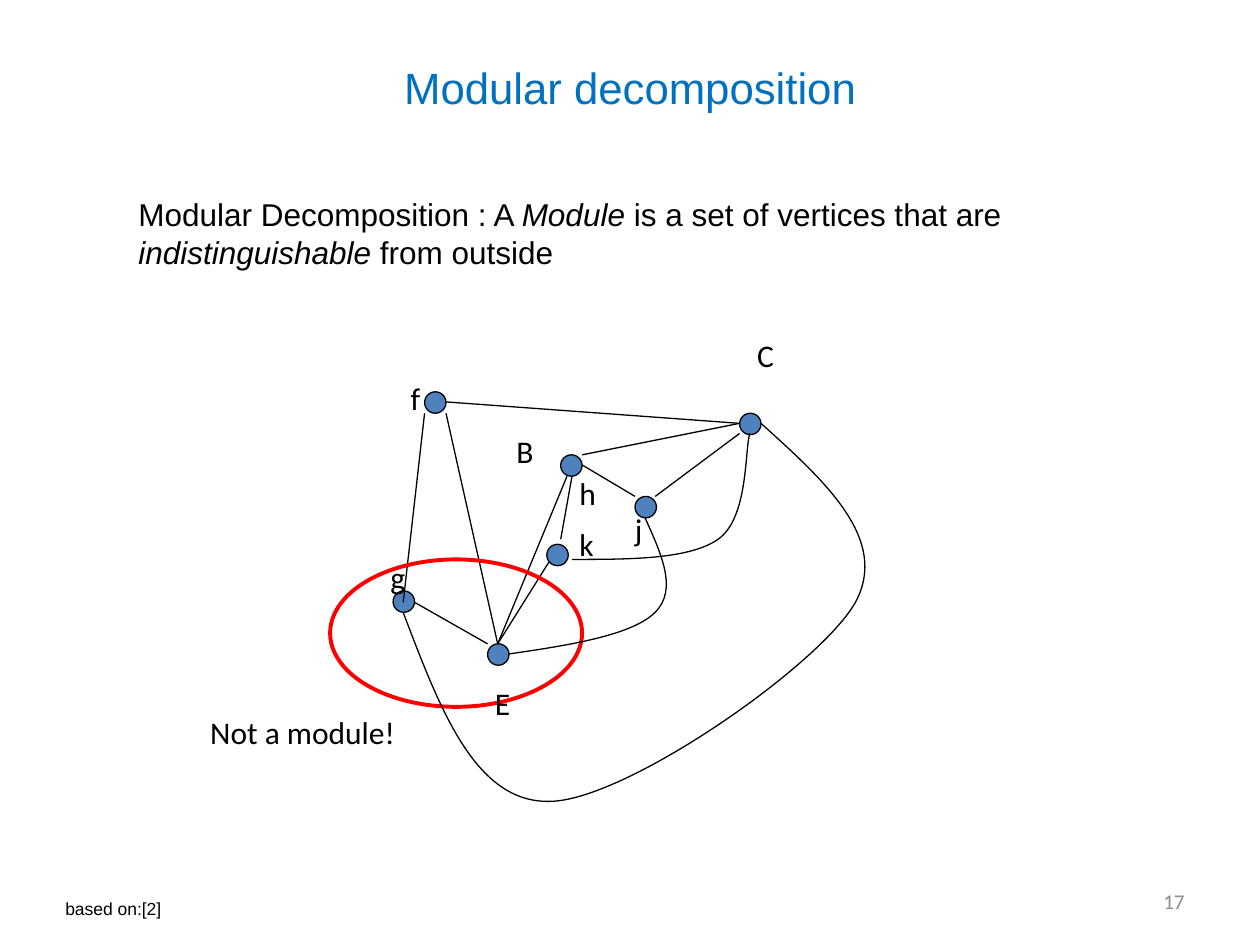
from lxml import etree
from pptx import Presentation
from pptx.dml.color import RGBColor
from pptx.enum.shapes import MSO_CONNECTOR, MSO_SHAPE
from pptx.enum.text import MSO_ANCHOR, PP_ALIGN
from pptx.oxml.ns import qn
from pptx.util import Inches, Pt

LINE, OVAL = MSO_CONNECTOR.STRAIGHT, MSO_SHAPE.OVAL
TOP, MIDDLE = MSO_ANCHOR.TOP, MSO_ANCHOR.MIDDLE
LEFT, CENTER, RIGHT = PP_ALIGN.LEFT, PP_ALIGN.CENTER, PP_ALIGN.RIGHT
BLACK, BLUE, RED = "000000", "4F81BD", "FF0000"
NODE, LABEL_H = 0.17, 0.4

# Content: (text, italic) runs of the definition
DEFINITION = [("Modular Decomposition : A ", False), ("Module", True),
              (" is a set of vertices that are ", False),
              ("indistinguishable", True), (" from outside", False)]

# Graph: left and top of each vertex
NODES = {"E": (3.87, 5.11), "h": (4.45, 3.61), "g": (3.12, 4.69),
         "C": (5.87, 3.28), "j": (5.04, 3.94), "f": (3.37, 3.11)}
NODE_K = (4.34, 4.32)
EDGES = [
    ((4.45, 4.28), (4.54, 3.78)),  # k-h
    ((4.62, 3.69), (5.04, 3.94)),  # h-j
    ((5.2, 3.94), (5.87, 3.44)),   # j-C
    ((4.62, 3.61), (5.87, 3.36)),  # h-C
    ((4.37, 4.44), (3.95, 5.11)),  # k-E
    ((4.5, 3.78), (3.95, 5.11)),   # h-E
    ((3.29, 4.78), (3.87, 5.11)),  # g-E
    ((3.2, 4.78), (3.37, 3.28)),   # g-f
    ((3.95, 5.11), (3.54, 3.28)),  # E-f
    ((3.54, 3.19), (5.87, 3.36)),  # f-C
]
# Curved edges: start point, then two control points and an end per segment
CURVES = [
    [(4.54, 4.44), (5, 4.44), (5.47, 4.44), (5.7, 4.28),
     (5.94, 4.11), (5.91, 3.58), (5.95, 3.44)],              # k-C
    [(5.12, 4.11), (5.25, 4.4), (5.38, 4.68), (5.2, 4.86),
     (5.02, 5.04), (4.53, 5.12), (4.04, 5.19)],              # j-E
    [(6.04, 3.36), (6.55, 3.82), (7.06, 4.28), (6.79, 4.78),
     (6.51, 5.28), (4.97, 6.35), (4.37, 6.36),
     (3.77, 6.38), (3.49, 5.62), (3.2, 4.86)],               # C-g
]
# Labels: text, left, top, width
LABELS = [("Not a module!", 1.57, 5.61, 1.92), ("B", 4, 3.38, 0.75),
          ("C", 5.91, 2.62, 0.75), ("E", 3.83, 5.38, 0.75),
          ("f", 3.16, 2.96, 0.75), ("g", 3, 4.38, 0.75),
          ("h", 4.5, 3.71, 0.38), ("k", 4.5, 4.12, 0.75),
          ("j", 4.94, 4, 0.22)]

prs = Presentation()
prs.slide_width, prs.slide_height = Inches(10), Inches(7.5)
s = prs.slides.add_slide(prs.slide_layouts[6])


def rgb(color):
    return RGBColor.from_string(color)


def outline(sp, color=BLACK, width=0.75):
    sp.line.color.rgb = rgb(color)
    sp.line.width = Pt(width)


def add_text(runs, x, y, w, h, size, font, color=BLACK, align=LEFT, anchor=TOP):
    tf = s.shapes.add_textbox(*map(Inches, (x, y, w, h))).text_frame
    tf.word_wrap = True
    tf.vertical_anchor = anchor
    p = tf.paragraphs[0]
    p.alignment = align
    for text, italic in runs:
        r = p.add_run()
        r.text = text
        r.font.name, r.font.size, r.font.italic = font, Pt(size), italic
        r.font.color.rgb = rgb(color)


def add_oval(x, y, w, h, fill=None, color=BLACK, width=0.75):
    sp = s.shapes.add_shape(OVAL, *map(Inches, (x, y, w, h)))
    sp.shadow.inherit = False
    if fill:
        sp.fill.solid()
        sp.fill.fore_color.rgb = rgb(fill)
    else:
        sp.fill.background()
    outline(sp, color, width)


def add_edge(start, end):
    sp = s.shapes.add_connector(LINE, *map(Inches, start + end))
    outline(sp)
    etree.SubElement(sp._element.spPr, qn("a:effectLst"))


def add_curve(pts):
    start, *rest = [(Inches(x), Inches(y)) for x, y in pts]
    fb = s.shapes.build_freeform(*start)
    fb.add_line_segments(rest, close=False)
    sp = fb.convert_to_shape()
    # Each three straight segments become one cubic curve
    steps = list(sp._element.iter(qn("a:lnTo")))
    for i in range(0, len(steps), 3):
        cubic = etree.Element(qn("a:cubicBezTo"))
        steps[i].addprevious(cubic)
        for step in steps[i:i + 3]:
            cubic.append(step[0])
            step.getparent().remove(step)
    sp.shadow.inherit = False
    sp.fill.background()
    outline(sp)


# Title, definition and page number
add_text([("Modular decomposition", False)], 0.5, 0.3, 9, 0.78, 25, "Arial",
         "0070C0", CENTER, MIDDLE)
add_text(DEFINITION, 1, 1.5, 7.33, 5.5, 18, "Arial")
add_text([("17", False)], 7.17, 6.95, 2.33, 0.4, 12, "Calibri", "8C8C8C", RIGHT, MIDDLE)

# Graph, with the red set drawn around g and E
for x, y in NODES.values():
    add_oval(x, y, NODE, NODE, BLUE)
for start, end in EDGES:
    add_edge(start, end)
add_oval(2.62, 4.44, 2, 1.17, color=RED, width=2.25)
for pts in CURVES:
    add_curve(pts)
add_oval(*NODE_K, NODE, NODE, BLUE)

# Labels and source
for text, x, y, w in LABELS:
    add_text([(text, False)], x, y, w, LABEL_H, 18, "Calibri")
add_text([("based on:[2]", False)], 0.42, 7.08, 1.84, 0.27, 10, "Arial")

prs.save("out.pptx")
